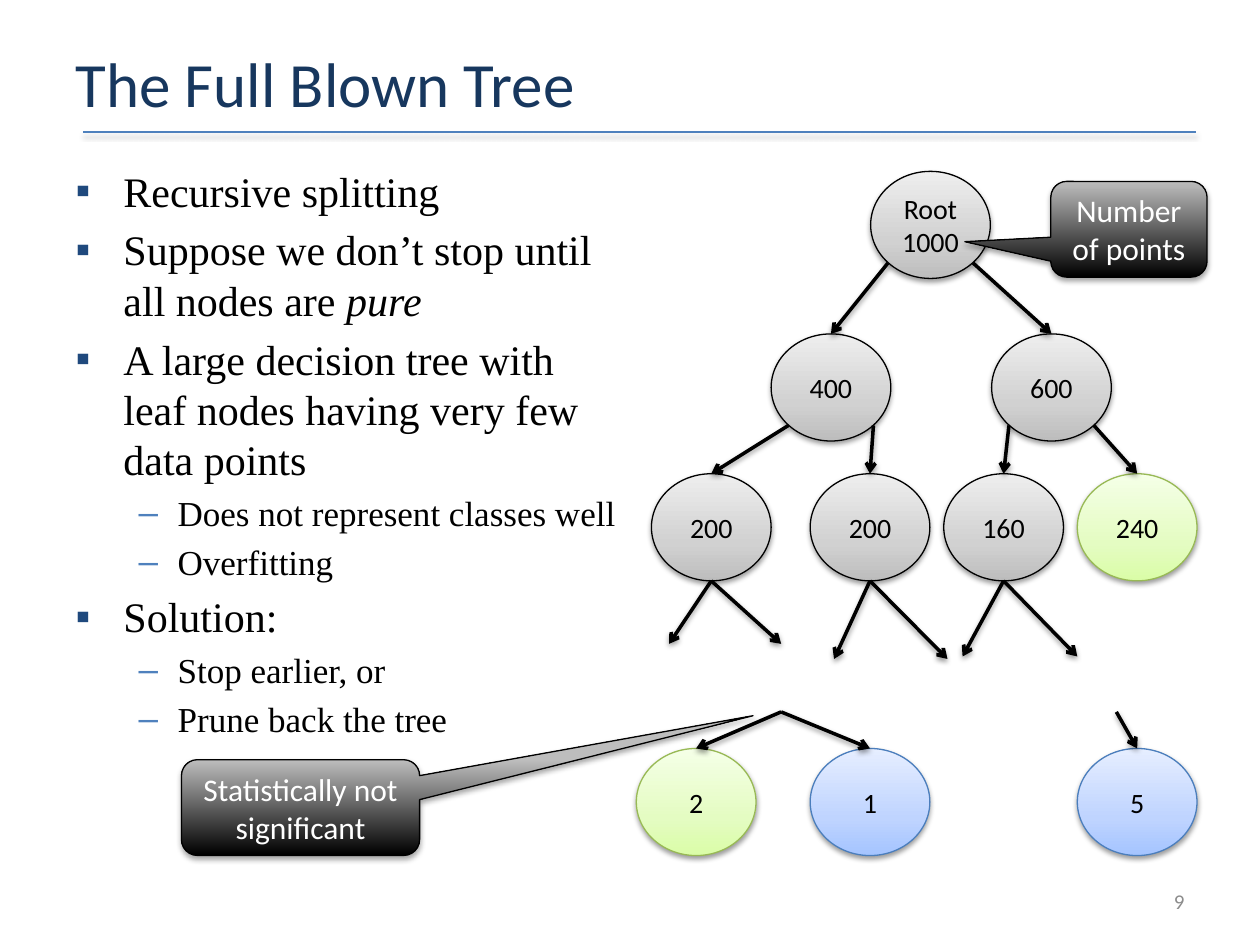
from lxml.etree import SubElement as Sub
from pptx import Presentation
from pptx.dml.color import RGBColor as Rgb
from pptx.enum.shapes import MSO_CONNECTOR as Conn, MSO_SHAPE as Kind
from pptx.enum.text import MSO_ANCHOR as Anchor, MSO_AUTO_SIZE as Fit, PP_ALIGN as Align
from pptx.oxml.ns import qn
from pptx.util import Inches, Pt

HUES = {"title": "17375E", "ink": "000000", "white": "FFFFFF", "page": "8C8C8C",
        "rule": "4F81BD", "square": "1F497D", "dash": "4F81BD"}
TONES = {
    "gray": ("000000", [(0, "BDBDBD"), (35, "D1D1D1"), (100, "EEEEEE")]),
    "green": ("98B955", [(0, "DAFDA7"), (35, "E4FCC2"), (100, "F5FFE7")]),
    "blue": ("4B7EBC", [(0, "A4C4FF"), (35, "BFD4FF"), (100, "E6EEFF")]),
    "dark": ("000000", [(0, "000000"), (100, "BDBDBD")]),
}
LEVELS = [(24, 0.38, -0.38, "▪", "square"), (20, 0.81, -0.31, "–", "dash")]
POINTS = [
    (0, ["Recursive splitting"]),
    (0, ["Suppose we don’t stop until all nodes are ", "pure"]),
    (0, ["A large decision tree with leaf nodes having very few data points"]),
    (1, ["Does not represent classes well"]),
    (1, ["Overfitting"]),
    (0, ["Solution:"]),
    (1, ["Stop earlier, or"]),
    (1, ["Prune back the tree"]),
]
WIDE, HIGH = 0.95, 0.85
ROWS = [0, 1.29, 2.4, 4.58]
NODES = {
    "root": (1.86, 0, "Root 1000", "gray"),
    "left": (1.07, 1, "400", "gray"),
    "right": (2.82, 1, "600", "gray"),
    "one": (0.12, 2, "200", "gray"),
    "two": (1.38, 2, "200", "gray"),
    "four": (3.5, 2, "240", "green"),
    "three": (2.44, 2, "160", "gray"),
    "leaf1": (0, 3, "2", "green"),
    "leaf2": (1.38, 3, "1", "blue"),
    "leaf3": (3.5, 3, "5", "blue"),
}
SPLITS = [("root", "left", "right"), ("left", "one", "two"), ("right", "three", "four")]
STUBS = [("one", 0.26, 1.15, 3.75), ("three", 2.59, 3.5, 3.85), ("two", 1.57, 2.47, 3.87)]
TAILS = [(1.15, "leaf1"), (1.15, "leaf2"), (3.81, "leaf3")]


def place(item, box):
    """Move a shape to a box in inches."""
    item.left, item.top, item.width, item.height = map(Inches, box)


def write(para, text, size, hue, font="Calibri"):
    """Add one run to a paragraph and return it."""
    run = para.add_run()
    run.text = text
    run.font.size, run.font.name = Pt(size), font
    run.font.color.rgb = Rgb.from_string(HUES[hue])
    return run


def shade(item, alpha=38, dist=1.6):
    """Give a shape or line a soft shadow below it."""
    glow = Sub(Sub(item._element.spPr, qn("a:effectLst")), qn("a:outerShdw"), blurRad=str(Pt(3.1)),
               dist=str(Pt(dist)), dir="5400000", rotWithShape="0")
    tint = Sub(glow, qn("a:srgbClr"), val=HUES["ink"])
    Sub(tint, qn("a:alpha"), val=str(alpha * 1000))


def paint(item, tone):
    """Fill a shape with an upward gradient and outline it."""
    edge, stops = TONES[tone]
    item.fill.gradient()
    item.fill.gradient_angle = 90
    ramp = item._element.spPr.find(".//" + qn("a:gsLst"))
    ramp.clear()
    for pos, hue in stops:
        Sub(Sub(ramp, qn("a:gs"), pos=str(pos * 1000)), qn("a:srgbClr"), val=hue)
    item.line.color.rgb = Rgb.from_string(edge)
    item.line.width = Pt(0.75)


def bubble(slide, kind, box, text, size, hue, tone):
    """Draw a gradient shape with centred text."""
    item = slide.shapes.add_shape(kind, *map(Inches, box))
    paint(item, tone)
    frame = item.text_frame
    frame.word_wrap, frame.vertical_anchor = True, Anchor.MIDDLE
    para = frame.paragraphs[0]
    para.alignment = Align.CENTER
    write(para, text, size, hue)
    return item


def link(slide, start, end, hue="ink", width=2, arrow=True):
    """Draw a shadowed line, with an arrowhead if asked."""
    item = slide.shapes.add_connector(Conn.STRAIGHT, *map(Inches, start + end))
    item.line.color.rgb = Rgb.from_string(HUES[hue])
    item.line.width = Pt(width)
    if arrow:
        Sub(item.line._get_or_add_ln(), qn("a:tailEnd"), type="arrow")
    shade(item)


def head(slide, box):
    """Set the title and the rule under it."""
    x, y, wide, high = box
    link(slide, (x + 0.16, y + 0.75), (x + wide - 0.01, y + 0.75), "rule", 1, False)
    title = slide.shapes.title
    place(title, box)
    frame = title.text_frame
    frame.auto_size, frame.vertical_anchor = Fit.NONE, Anchor.MIDDLE
    para = frame.paragraphs[0]
    para.alignment = Align.LEFT
    write(para, "The Full Blown Tree", 36, "title")


def notes(slide, box):
    """Fill the body with the two-level list."""
    body = slide.placeholders[1]
    place(body, box)
    frame = body.text_frame
    frame.auto_size = Fit.NONE
    for num, (level, parts) in enumerate(POINTS):
        para = frame.add_paragraph() if num else frame.paragraphs[0]
        para.level = level
        size, left, hang, mark, hue = LEVELS[level]
        props = para._p.get_or_add_pPr()
        props.set("marL", str(Inches(left)))
        props.set("indent", str(Inches(hang)))
        Sub(Sub(props, qn("a:buClr")), qn("a:srgbClr"), val=HUES[hue])
        Sub(props, qn("a:buChar"), char=mark)
        for part in parts:
            run = write(para, part, size, "ink", "Times New Roman")
            run.font.italic = part == "pure"


def tree(slide, box):
    """Draw the nodes and the arrows between them."""
    x, y = box[:2]

    def port(name, across, down):
        """Find a point on a node, from its centre in radii."""
        left, row = NODES[name][:2]
        return (x + left + WIDE / 2 * (1 + across), y + ROWS[row] + HIGH / 2 * (1 + down))

    for left, row, text, tone in NODES.values():
        spot = (x + left, y + ROWS[row], WIDE, HIGH)
        shade(bubble(slide, Kind.OVAL, spot, text, 16, "ink", tone))
    for name, *kids in SPLITS:
        for side, kid in zip((-0.71, 0.71), kids):
            link(slide, port(name, side, 0.71), port(kid, 0, -1))
    for name, *ends, low in STUBS:
        for end in ends:
            link(slide, port(name, 0, 1), (x + end, y + low))
    for start, leaf in TAILS:
        link(slide, (x + start, y + 4.29), port(leaf, 0, -1))


def callout(slide, box, text, tip):
    """Draw a dark callout whose tip is given in box sizes."""
    item = bubble(slide, Kind.ROUNDED_RECTANGULAR_CALLOUT, box, text, 18, "white", "dark")
    item.adjustments[0], item.adjustments[1] = tip
    shade(item, 35, 1.8)


def page(slide, box):
    """Write the page number."""
    item = slide.shapes.add_textbox(*map(Inches, box))
    frame = item.text_frame
    frame.word_wrap, frame.vertical_anchor = True, Anchor.MIDDLE
    para = frame.paragraphs[0]
    para.alignment = Align.RIGHT
    write(para, "9", 12, "page")


def main():
    """Build the slide and save it."""
    deck = Presentation()
    deck.slide_width, deck.slide_height = Inches(10), Inches(7.5)
    slide = deck.slides.add_slide(deck.slide_layouts[1])
    head(slide, (0.5, 0.3, 9, 0.71))
    notes(slide, (0.5, 1.26, 4.55, 5.44))
    page(slide, (7.17, 6.95, 2.33, 0.4))
    tree(slide, (5.05, 1.36, 4.45, 5.43))
    callout(slide, (8.34, 1.44, 1.24, 0.76), "Number of points", (-1.05, 0.13))
    callout(slide, (1.44, 6.03, 1.89, 0.76), "Statistically not significant", (1.9, -0.96))
    deck.save("out.pptx")


if __name__ == "__main__":
    main()
